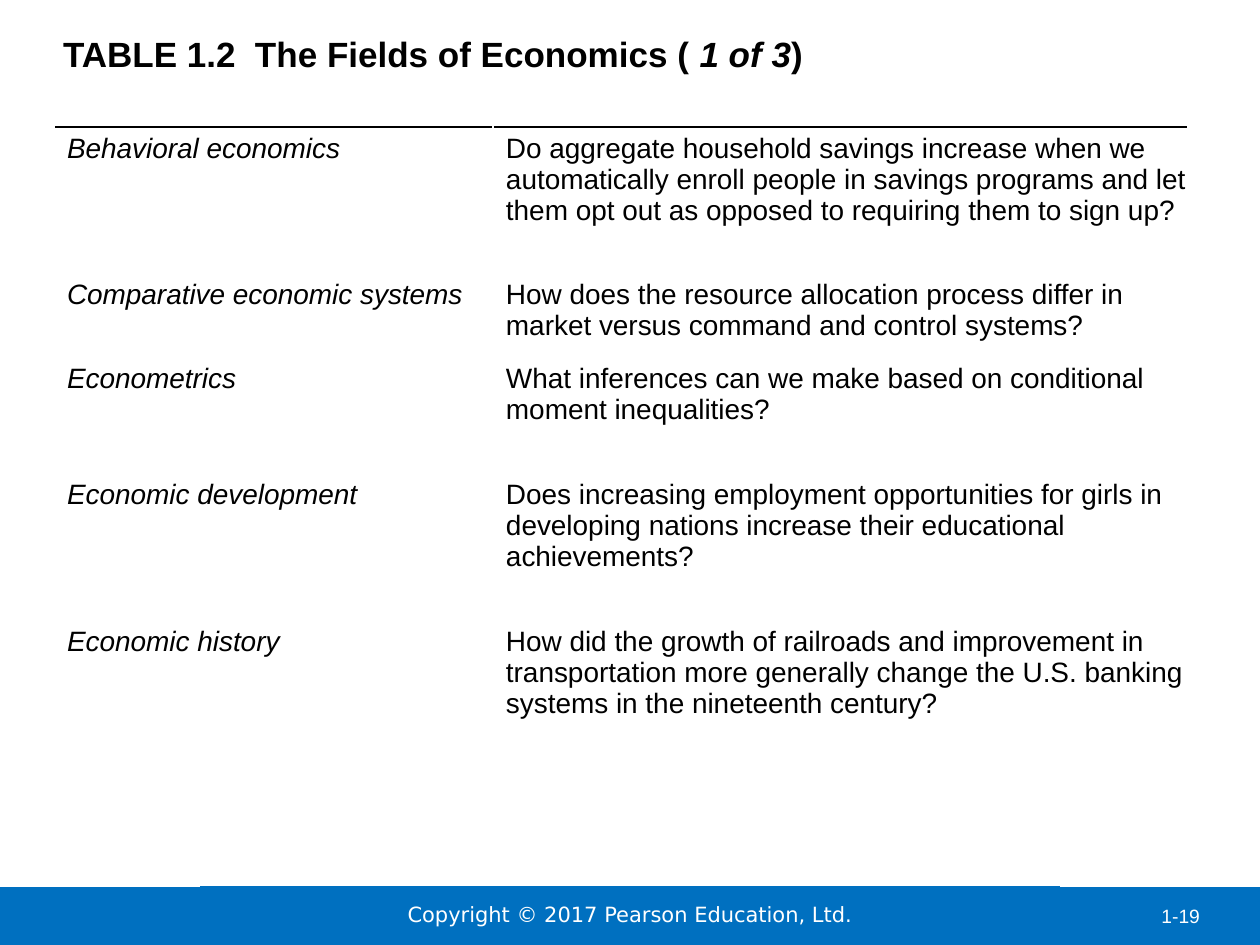
from dataclasses import dataclass

from lxml.etree import SubElement
from pptx import Presentation
from pptx.dml.color import RGBColor
from pptx.enum.shapes import MSO_SHAPE
from pptx.enum.text import MSO_ANCHOR, PP_ALIGN
from pptx.oxml.ns import qn
from pptx.util import Emu, Inches, Pt

PX_PER_INCH = 126


def px(length):
    return Emu(round(length * Inches(1) / PX_PER_INCH))


@dataclass(frozen=True)
class Theme:
    black: str = "000000"
    white: str = "FFFFFF"
    blue: str = "0070C0"
    font: str = "Arial"
    footer_font: str = "DejaVu Sans"
    title_size: int = 20
    table_size: int = 16
    footer_size: int = 12
    number_size: int = 11


THEME = Theme()


def add_text(paragraph, text, size, color=THEME.black, font=THEME.font, bold=False, italic=False):
    run = paragraph.add_run()
    run.text = text
    run.font.size = Pt(size)
    run.font.name = font
    run.font.bold = bold
    run.font.italic = italic
    run.font.color.rgb = RGBColor.from_string(color)


def set_margins(target, left=0, top=0, right=0, bottom=0):
    target.margin_left, target.margin_top = px(left), px(top)
    target.margin_right, target.margin_bottom = px(right), px(bottom)


class SlideBuilder:
    def __init__(self, slide, theme):
        self.slide = slide
        self.theme = theme

    def title(self, box, parts):
        """Fill the title from (text, italic) parts."""
        shape = self.slide.shapes.title
        shape.left, shape.top, shape.width, shape.height = map(px, box)
        frame = shape.text_frame
        frame.word_wrap = True
        frame.vertical_anchor = MSO_ANCHOR.TOP
        set_margins(frame)
        paragraph = frame.paragraphs[0]
        paragraph.alignment = PP_ALIGN.LEFT
        for text, italic in parts:
            add_text(paragraph, text, self.theme.title_size, bold=True, italic=italic)

    def bar(self, box):
        shape = self.slide.shapes.add_shape(MSO_SHAPE.RECTANGLE, *map(px, box))
        shape.shadow.inherit = False
        shape.fill.solid()
        shape.fill.fore_color.rgb = RGBColor.from_string(self.theme.blue)
        shape.line.fill.background()
        return shape

    def footer(self, box, text):
        frame = self.bar(box).text_frame
        frame.word_wrap = True
        frame.vertical_anchor = MSO_ANCHOR.MIDDLE
        set_margins(frame)
        paragraph = frame.paragraphs[0]
        paragraph.alignment = PP_ALIGN.CENTER
        add_text(paragraph, text, self.theme.footer_size,
                 color=self.theme.white, font=self.theme.footer_font)

    def page_number(self, box, text):
        frame = self.slide.shapes.add_textbox(*map(px, box)).text_frame
        frame.word_wrap = True
        add_text(frame.paragraphs[0], text, self.theme.number_size, color=self.theme.white)

    def top_border(self, cell):
        properties = cell._tc.get_or_add_tcPr()
        line = SubElement(properties, qn("a:lnT"), w=str(Pt(1)))
        properties.insert(0, line)
        fill = SubElement(line, qn("a:solidFill"))
        SubElement(fill, qn("a:srgbClr"), val=self.theme.black)

    def table(self, left, top, widths, heights, rows):
        table = self.slide.shapes.add_table(
            len(rows), len(widths), px(left), px(top), px(sum(widths)), px(sum(heights))).table
        table.first_row = table.horz_banding = False
        for column, width in zip(table.columns, widths):
            column.width = px(width)
        for row, height, texts in zip(table.rows, heights, rows):
            row.height = px(height)
            for index, (cell, text) in enumerate(zip(row.cells, texts)):
                cell.fill.background()
                set_margins(cell, left=13, top=6, bottom=6)
                add_text(cell.text_frame.paragraphs[0], text,
                         self.theme.table_size, italic=index == 0)
        for cell in table.rows[0].cells:
            self.top_border(cell)


FIELDS = [
    ("Behavioral economics",
     "Do aggregate household savings increase when we automatically enroll people in "
     "savings programs and let them opt out as opposed to requiring them to sign up?"),
    ("Comparative economic systems",
     "How does the resource allocation process differ in market versus command and "
     "control systems?"),
    ("Econometrics",
     "What inferences can we make based on conditional moment inequalities?"),
    ("Economic development",
     "Does increasing employment opportunities for girls in developing nations increase "
     "their educational achievements?"),
    ("Economic history",
     "How did the growth of railroads and improvement in transportation more generally "
     "change the U.S. banking systems in the nineteenth century?"),
]


def main():
    presentation = Presentation()
    presentation.slide_width, presentation.slide_height = px(1260), px(945)
    slide = presentation.slides.add_slide(presentation.slide_layouts[5])
    builder = SlideBuilder(slide, THEME)

    # Footer band
    builder.bar((-1, 887, 1262, 59))
    builder.footer((200, 886, 860, 57), "Copyright © 2017 Pearson Education, Ltd.")
    builder.page_number((1149, 898, 96, 37), "1-19")

    # Title
    builder.title((63, 32, 1134, 147), [
        ("TABLE 1.2  The Fields of Economics ( ", False), ("1 of 3", True), (")", False)])

    # Fields of economics and their sample questions
    builder.table(54, 127, widths=(439, 695), heights=(146, 84, 116, 147, 136), rows=FIELDS)

    presentation.save("out.pptx")


if __name__ == "__main__":
    main()
